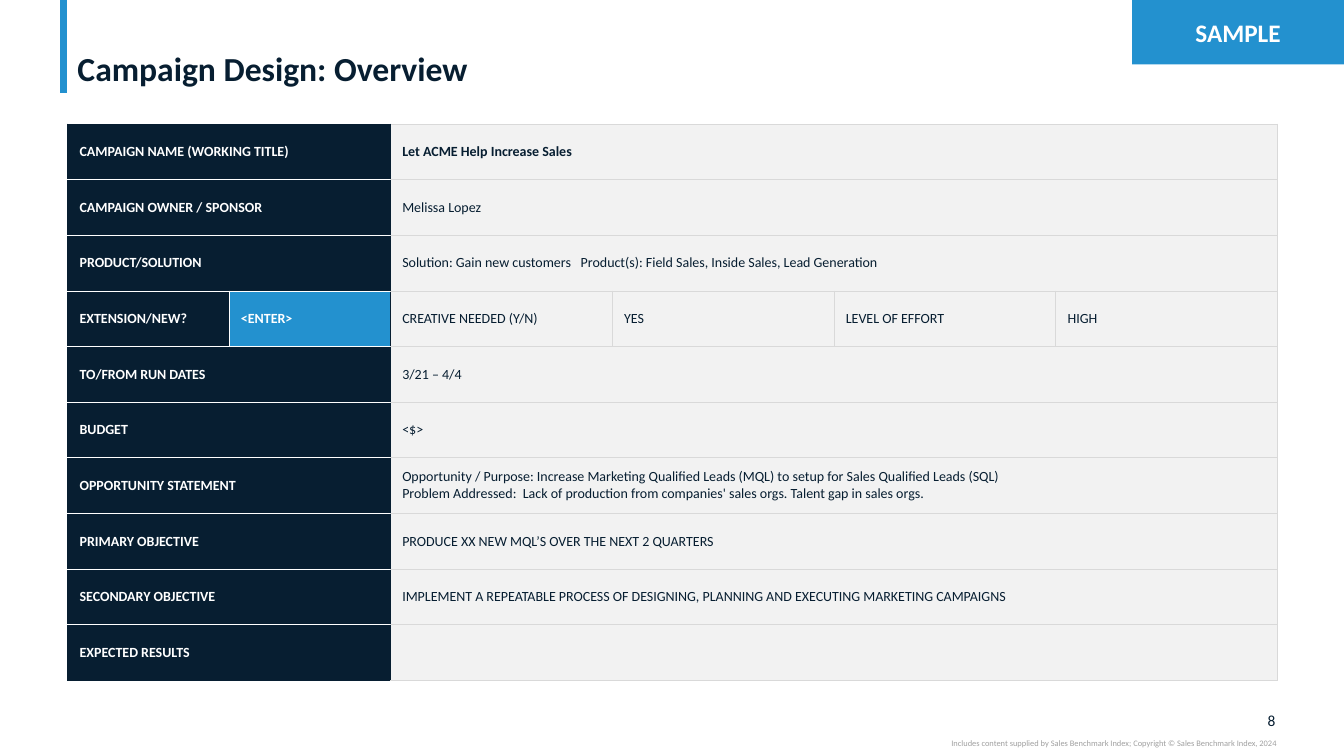
"""Build the campaign design overview slide."""
from lxml import etree
from pptx import Presentation, util as u
from pptx.dml.color import RGBColor
from pptx.enum import shapes, text
from pptx.oxml.ns import qn

NAVY, BLUE, WHITE = "071E31", "2391CF", "FFFFFF"
PALE, RULE, GREY = "F2F2F2", "D9D9D9", "A0A0A0"
FONT = "Calibri"
PX = 9144

ROWS = [
    ("CAMPAIGN NAME (WORKING TITLE)", "Let ACME Help Increase Sales"),
    ("CAMPAIGN OWNER / SPONSOR", "Melissa Lopez"),
    ("PRODUCT/SOLUTION",
     "Solution: Gain new customers\tProduct(s): Field Sales, Inside Sales, Lead Generation"),
    ("EXTENSION/NEW?", "<ENTER>", "CREATIVE NEEDED (Y/N)", "YES", "LEVEL OF EFFORT", "HIGH"),
    ("TO/FROM RUN DATES", "3/21 – 4/4"),
    ("BUDGET", "<$>"),
    ("OPPORTUNITY STATEMENT",
     "Opportunity / Purpose: Increase Marketing Qualified Leads (MQL) to setup for "
     "Sales Qualified Leads (SQL)\nProblem Addressed:  Lack of production from companies' "
     "sales orgs. Talent gap in sales orgs."),
    ("PRIMARY OBJECTIVE", "PRODUCE XX NEW MQL’S OVER THE NEXT 2 QUARTERS"),
    ("SECONDARY OBJECTIVE",
     "IMPLEMENT A REPEATABLE PROCESS OF DESIGNING, PLANNING AND EXECUTING MARKETING CAMPAIGNS"),
    ("EXPECTED RESULTS", ""),
]
COLS = [160, 160, 220, 220, 220, 220]
GRID = (67, 123, 1200, 552)
TAB = 177

LEFT, MID, RIGHT = text.PP_ALIGN.LEFT, text.PP_ALIGN.CENTER, text.PP_ALIGN.RIGHT
TOP, CORE, BASE = text.MSO_ANCHOR.TOP, text.MSO_ANCHOR.MIDDLE, text.MSO_ANCHOR.BOTTOM
SIDES = ("margin_left", "margin_top", "margin_right", "margin_bottom")

LABELS = [
    ("Campaign Design: Overview", (67, 4, 1199, 84), (10, 0, 10, 0),
     dict(size=24, color=NAVY, bold=True, align=LEFT, gap=0.9), BASE),
    ("8", (1232, 705, 33, 19), (0, 0, 0, 0),
     dict(size=11, color=NAVY, align=RIGHT), CORE),
    ("Includes content supplied by Sales Benchmark Index; "
     "Copyright © Sales Benchmark Index, 2024", (750, 732, 516, 10), (0, 0, 0, 0),
     dict(size=6, color=GREY, align=RIGHT), TOP),
]


def rgb(code):
    """Return a colour from its hex string."""
    return RGBColor.from_string(code)


def px(*nums):
    """Turn px lengths into EMU."""
    return [n * PX for n in nums]


def pad(item, gaps):
    """Set the four inner margins of a frame or cell."""
    for side, size in zip(SIDES, px(*gaps)):
        setattr(item, side, size)


def write(frame, words, size, color, bold=False, align=LEFT, gap=None):
    """Fill a text frame with formatted paragraphs."""
    frame.text = words
    frame.word_wrap = True
    for para in frame.paragraphs:
        para.alignment = align
        if gap:
            para.line_spacing = gap
        if "\t" in para.text:
            stops = etree.SubElement(para._p.get_or_add_pPr(), qn("a:tabLst"))
            etree.SubElement(stops, qn("a:tab"), pos=str(TAB * PX), algn="l")
        look = dict(name=FONT, size=u.Pt(size), bold=bold)
        for run in para.runs:
            for key, val in look.items():
                setattr(run.font, key, val)
            run.font.color.rgb = rgb(color)


def edge(cell, tints):
    """Draw the cell borders, given as side and colour."""
    props = cell._tc.get_or_add_tcPr()
    for side, tint in tints.items():
        line = etree.SubElement(props, qn("a:ln" + side), w=str(u.Pt(0.5)))
        fill = etree.SubElement(line, qn("a:solidFill"))
        etree.SubElement(fill, qn("a:srgbClr"), val=tint)


def paint(cell, row, col, split):
    """Colour one cell by its place in the grid."""
    dark, enter = col < 2, split and col == 1
    last = len(ROWS) - 1
    edge(cell, {
        "L": WHITE if enter else NAVY if col < 3 else RULE,
        "R": WHITE if split and col == 0 else NAVY if dark else RULE,
        "T": RULE if not dark else WHITE if row else NAVY,
        "B": RULE if not dark else WHITE if row < last else NAVY,
    })
    cell.fill.solid()
    cell.fill.fore_color.rgb = rgb(BLUE if enter else NAVY if dark else PALE)
    cell.vertical_anchor = CORE
    pad(cell, (12, 8, 12, 8))


def add_grid(slide):
    """Add the campaign table."""
    table = slide.shapes.add_table(len(ROWS), len(COLS), *px(*GRID)).table
    table.first_row = table.horz_banding = False
    for col, wide in zip(table.columns, px(*COLS)):
        col.width = wide
    for r, words in enumerate(ROWS):
        split = len(words) == len(COLS)
        for c in range(len(COLS)):
            paint(table.cell(r, c), r, c, split)
        if not split:
            table.cell(r, 0).merge(table.cell(r, 1))
            table.cell(r, 2).merge(table.cell(r, 5))
        for c, word in zip(range(len(COLS)) if split else (0, 2), words):
            write(table.cell(r, c).text_frame, word, 10, WHITE if c < 2 else NAVY,
                  bold=c < 2 or r == 0)


def main():
    """Build and save the slide."""
    deck = Presentation()
    deck.slide_width, deck.slide_height = px(1333, 750)
    slide = deck.slides.add_slide(deck.slide_layouts[6])

    bar = slide.shapes.add_connector(shapes.MSO_CONNECTOR.STRAIGHT, *px(63, 0, 63, 92))
    bar.line.color.rgb = rgb(BLUE)
    bar.line.width = u.Pt(5)
    etree.SubElement(bar._element.spPr, qn("a:effectLst"))

    for words, place, gaps, look, anchor in LABELS:
        frame = slide.shapes.add_textbox(*px(*place)).text_frame
        frame.vertical_anchor = anchor
        pad(frame, gaps)
        write(frame, words, **look)

    add_grid(slide)

    tag = slide.shapes.add_shape(shapes.MSO_SHAPE.RECTANGLE, *px(1123, 0, 210, 64))
    tag.shadow.inherit = False
    tag.fill.solid()
    tag.fill.fore_color.rgb = rgb(BLUE)
    tag.line.fill.background()
    tag.text_frame.vertical_anchor = CORE
    write(tag.text_frame, "SAMPLE", 18, WHITE, bold=True, align=MID)

    deck.save("out.pptx")


if __name__ == "__main__":
    main()
